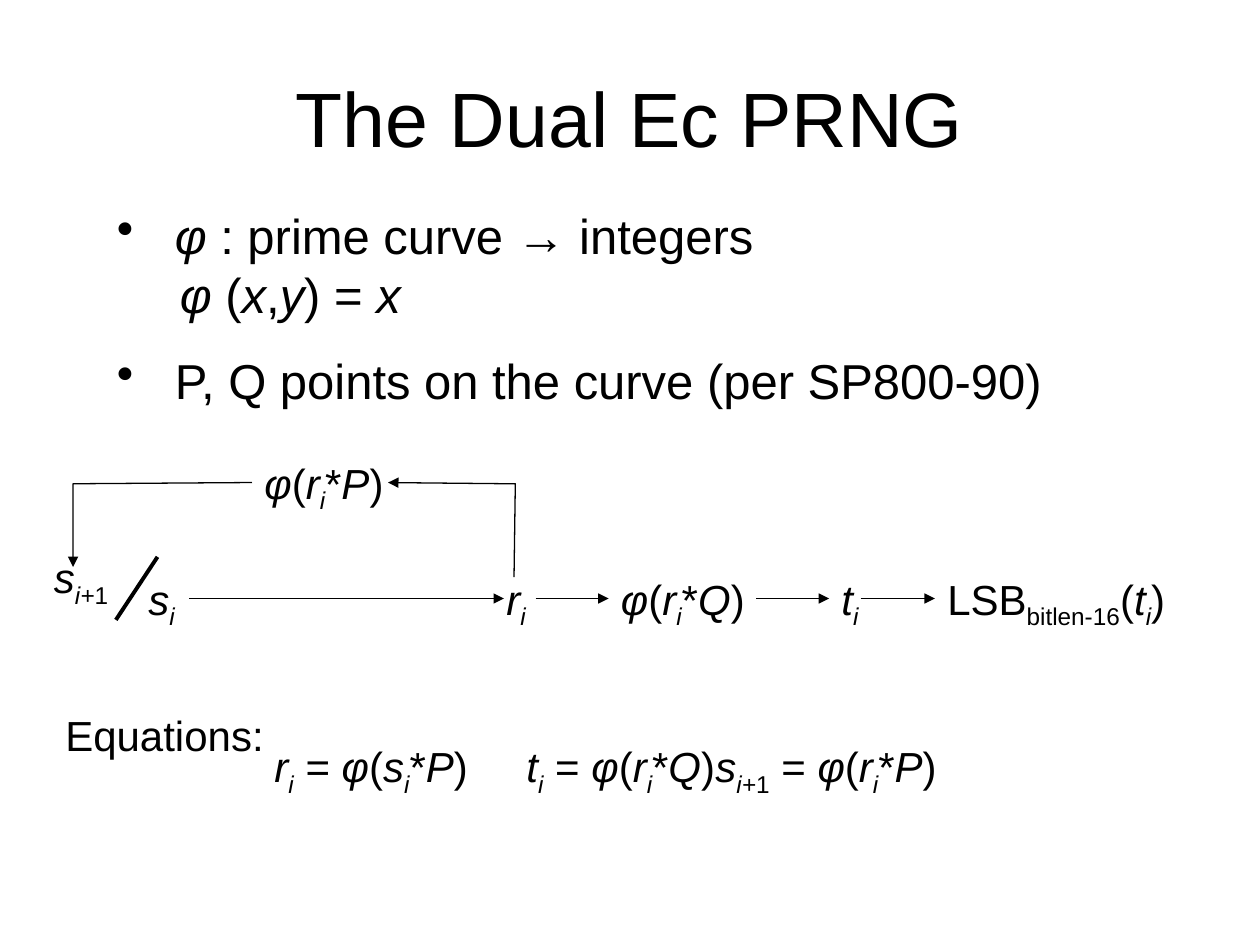
from lxml.etree import SubElement
from pptx import Presentation
from pptx.dml.color import RGBColor
from pptx.enum.shapes import MSO_CONNECTOR
from pptx.enum.text import MSO_ANCHOR, PP_ALIGN
from pptx.oxml.ns import qn
from pptx.util import Inches, Pt

BLACK = RGBColor(0, 0, 0)
FONT = "Arial"

# Marks: "|" parts runs, a leading "~" is italic, a leading "_" is subscript.
R, S, T = "~r|_~i", "~s|_~i", "~t|_~i"
PHI_P = f"~φ|(|{R}|*|~P|)"
PHI_Q = f"~φ|(|{R}|*|~Q|)"
NEXT = "~s|_~i+|_1"
SUMS = f"{R}| = |~φ|(|{S}|*|~P|)\t|{T}| = |{PHI_Q}\t|{NEXT}| = |{PHI_P}"
POINTS = ["~φ| : prime curve → integers|\n|\t|~φ| (|~x|,|~y|) = |~x",
          "P, Q points on the curve (per SP800-90)"]


class Board:
    def __init__(self, deck):
        self.slide = deck.slides.add_slide(deck.slide_layouts[6])
        self.shapes = self.slide.shapes

    def fill(self, para, text, size):
        """Write marked-up text into a paragraph."""
        font = para.font
        font.name, font.size, font.color.rgb = FONT, Pt(size), BLACK
        for part in text.split("|"):
            if part == "\n":
                para.add_line_break()
                continue
            run = para.add_run()
            run.text = part.lstrip("_~")
            if part.startswith("_"):
                run._r.get_or_add_rPr().set("baseline", "-25000")
            if "~" in part:
                run.font.italic = True

    def text(self, x, y, wide, high, *lines, size=24):
        frame = self.shapes.add_textbox(
            Inches(x), Inches(y), Inches(wide), Inches(high)).text_frame
        frame.word_wrap = True
        for i, line in enumerate(lines):
            para = frame.add_paragraph() if i else frame.paragraphs[0]
            self.fill(para, line, size)
        return frame

    def title(self, text):
        frame = self.text(0.5, 0.3, 9, 1.25, text, size=44)
        frame.vertical_anchor = MSO_ANCHOR.MIDDLE
        frame.paragraphs[0].alignment = PP_ALIGN.CENTER

    def list(self, x, y, wide, high, lines):
        frame = self.text(x, y, wide, high, *lines, size=28)
        for i, para in enumerate(frame.paragraphs):
            if i:
                para.space_before = Pt(16)
            props = para._p.get_or_add_pPr()
            props.set("marL", str(Inches(0.46)))
            props.set("indent", str(Inches(-0.46)))
            mark = props.makeelement(qn("a:buChar"), {"char": "•"})
            props.insert_element_before(mark, "a:tabLst", "a:defRPr", "a:extLst")

    def pen(self, shape, width, head):
        shape.line.color.rgb = BLACK
        shape.line.width = Pt(width)
        if head:
            SubElement(shape.line._get_or_add_ln(), qn("a:tailEnd"), type="triangle")

    def line(self, start, end, width=0.75, head=True):
        link = self.shapes.add_connector(
            MSO_CONNECTOR.STRAIGHT, *map(Inches, start + end))
        self.pen(link, width, head)
        SubElement(link._element.spPr, qn("a:effectLst"))

    def bend(self, start, *rest):
        """Draw an open arrow through several points."""
        path = self.shapes.build_freeform(*map(Inches, start))
        path.add_line_segments(
            [tuple(map(Inches, spot)) for spot in rest], close=False)
        shape = path.convert_to_shape()
        shape.fill.background()
        shape.shadow.inherit = False
        self.pen(shape, 0.75, True)


def main():
    deck = Presentation()
    deck.slide_width, deck.slide_height = Inches(10), Inches(7.5)
    board = Board(deck)
    board.title("The Dual Ec PRNG")
    board.list(0.83, 1.58, 8.33, 1.74, POINTS)

    row = 4.5
    for x, wide, text in [(1.08, 0.5, S), (3.92, 0.42, R), (4.83, 1.25, PHI_Q),
                          (6.58, 0.42, T),
                          (7.42, 2.17, f"LSB|_bitlen-16|(|{T}|)")]:
        board.text(x, row, wide, 0.5, text)
    board.text(2, 3.58, 1.25, 0.5, PHI_P)
    board.text(0.33, 4.33, 0.75, 0.5, NEXT)

    mid = row + 0.25
    for left, right in [(1.5, 4), (4.25, 4.83), (6, 6.58), (6.83, 7.42)]:
        board.line((left, mid), (right, mid))
    board.line((1.25, 4.42), (0.92, 4.92), width=2.25, head=False)
    board.bend((4.08, 4.58), (4.09, 3.84), (3.08, 3.83))
    board.bend((2, 3.83), (0.58, 3.84), (0.58, 4.5))

    board.text(2.08, 5.83, 6.42, 0.5, SUMS)
    board.text(0.42, 5.58, 4.43, 0.5, "Equations:")
    deck.save("out.pptx")


if __name__ == "__main__":
    main()
